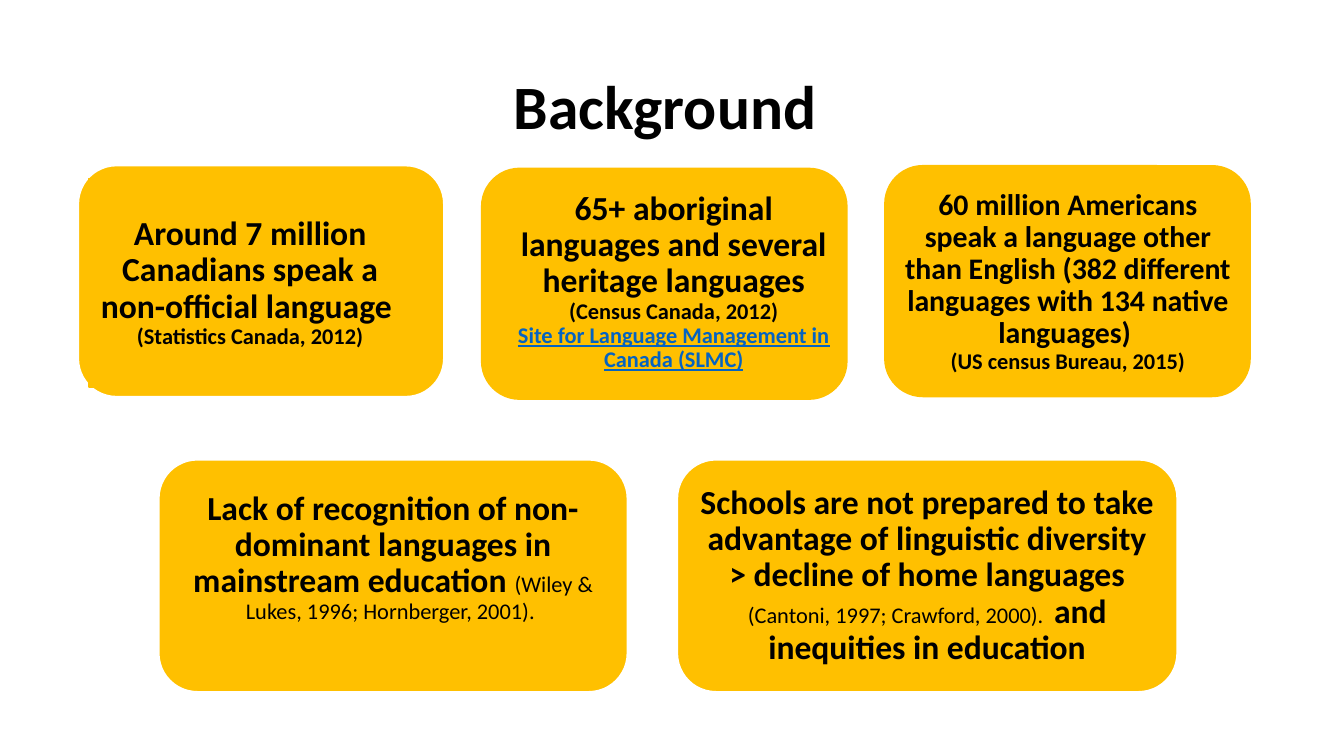
from dataclasses import dataclass
from typing import Optional

from pptx import Presentation
from pptx import util as u
from pptx.dml.color import RGBColor
from pptx.enum import shapes, text

GOLD, WHITE, BLACK, BLUE = "FFC000", "FFFFFF", "000000", "0563C1"
ROUND = shapes.MSO_SHAPE.ROUNDED_RECTANGLE
SOFT = shapes.MSO_SHAPE.FLOWCHART_ALTERNATE_PROCESS
RECT = shapes.MSO_SHAPE.RECTANGLE
PAD = 0.18


@dataclass
class Run:
    text: str
    size: float = 18
    bold: bool = True
    color: str = BLACK
    under: bool = False
    split: bool = False  # line break after the run


@dataclass
class Box:
    left: float
    top: float
    width: float
    height: float


@dataclass
class Fact:
    box: Box
    paras: list[list[Run]]
    fill: Optional[str] = None
    line: Optional[str] = None
    weight: float = 1
    kind: int = RECT
    foot: float = PAD  # bottom inset


def paint(color: str) -> RGBColor:
    return RGBColor.from_string(color)


def place(shape, box: Box) -> None:
    shape.left, shape.top = u.Cm(box.left), u.Cm(box.top)
    shape.width, shape.height = u.Cm(box.width), u.Cm(box.height)


def write(frame, paras: list[list[Run]], *, side: float = PAD,
          top: float = PAD, foot: float = PAD) -> None:
    frame.word_wrap = True
    frame.auto_size = text.MSO_AUTO_SIZE.NONE
    frame.vertical_anchor = text.MSO_ANCHOR.MIDDLE
    frame.margin_left = frame.margin_right = u.Cm(side)
    frame.margin_top, frame.margin_bottom = u.Cm(top), u.Cm(foot)
    for i, runs in enumerate(paras):
        para = frame.add_paragraph() if i else frame.paragraphs[0]
        para.alignment = text.PP_ALIGN.CENTER
        para.line_spacing = 0.9
        para.space_before = para.space_after = u.Pt(0)
        for item in runs:
            run = para.add_run()
            run.text = item.text
            font = run.font
            font.name, font.size = "Calibri", u.Pt(item.size)
            font.bold, font.underline = item.bold, item.under
            font.color.rgb = paint(item.color)
            if item.split:
                para.add_line_break()


def panel(slide, box: Box, kind: int, fill: Optional[str],
          line: Optional[str] = None, weight: float = 1):
    shape = slide.shapes.add_shape(kind, 0, 0, 0, 0)
    place(shape, box)
    shape.shadow.inherit = False
    if fill:
        shape.fill.solid()
        shape.fill.fore_color.rgb = paint(fill)
    else:
        shape.fill.background()
    if line:
        shape.line.color.rgb = paint(line)
        shape.line.width = u.Pt(weight)
    else:
        shape.line.fill.background()
    return shape


def draw(slide, fact: Fact) -> None:
    shape = panel(slide, fact.box, fact.kind, fact.fill, fact.line, fact.weight)
    write(shape.text_frame, fact.paras, foot=fact.foot)


# Upper row: text blocks laid over evenly spaced cards
UPPER = [
    Fact(Box(1.68, 3.38, 6.1, 3.94), [[
        Run("Around 7 million Canadians speak a non-official language ", split=True),
        Run("(Statistics Canada, 2012)", 12),
    ]], GOLD, GOLD, 0.75),
    Fact(Box(9.47, 3.35, 6.53, 3.96), [
        [Run("65+ aboriginal languages and several heritage languages "),
         Run("(Census Canada, 2012)", 12)],
        [Run("Site for Language Management in Canada (SLMC)", 12,
             color=BLUE, under=True)],
    ]),
    Fact(Box(16.92, 3.35, 6.53, 3.96), [[
        Run("60 million Americans speak a language other than English "
            "(382 different languages with 134 native languages) ", 16, split=True),
        Run("(US census Bureau, 2015)", 12),
    ]]),
]

# Lower row: cards that hold their own text
LOWER = [
    Fact(Box(12.8, 8.69, 9.45, 4.39), [[
        Run("Schools are not prepared to take advantage of linguistic "
            "diversity > decline of home languages "),
        Run("(Cantoni, 1997; Crawford, 2000).  ", 12, False),
        Run("and inequities in education"),
    ]], GOLD, WHITE, kind=ROUND),
    Fact(Box(3, 8.69, 8.86, 4.39), [[
        Run("Lack of recognition of non-dominant languages in "
            "mainstream education "),
        Run("(Wiley & Lukes, 1996; Hornberger, 2001). ", 12, False),
    ]], GOLD, WHITE, kind=ROUND, foot=0.87),
]


def main() -> None:
    deck = Presentation()
    deck.slide_width, deck.slide_height = u.Cm(25.4), u.Cm(14.29)
    slide = deck.slides.add_slide(deck.slide_layouts[5])

    # Title
    title = slide.shapes.title
    place(title, Box(1.75, 0.69, 21.9, 2.77))
    write(title.text_frame, [[Run("Background ", 33)]], top=0.1, foot=0.1)

    # Facts
    for i, fact in enumerate(UPPER):
        edge = WHITE if i == 0 else None
        top = 3.17 if i == 1 else 3.12
        panel(slide, Box(1.47 + 7.62 * i, top, 6.93, 4.39), SOFT, GOLD, edge, 1.5)
        draw(slide, fact)
    for fact in LOWER:
        draw(slide, fact)

    deck.save("out.pptx")


if __name__ == "__main__":
    main()
